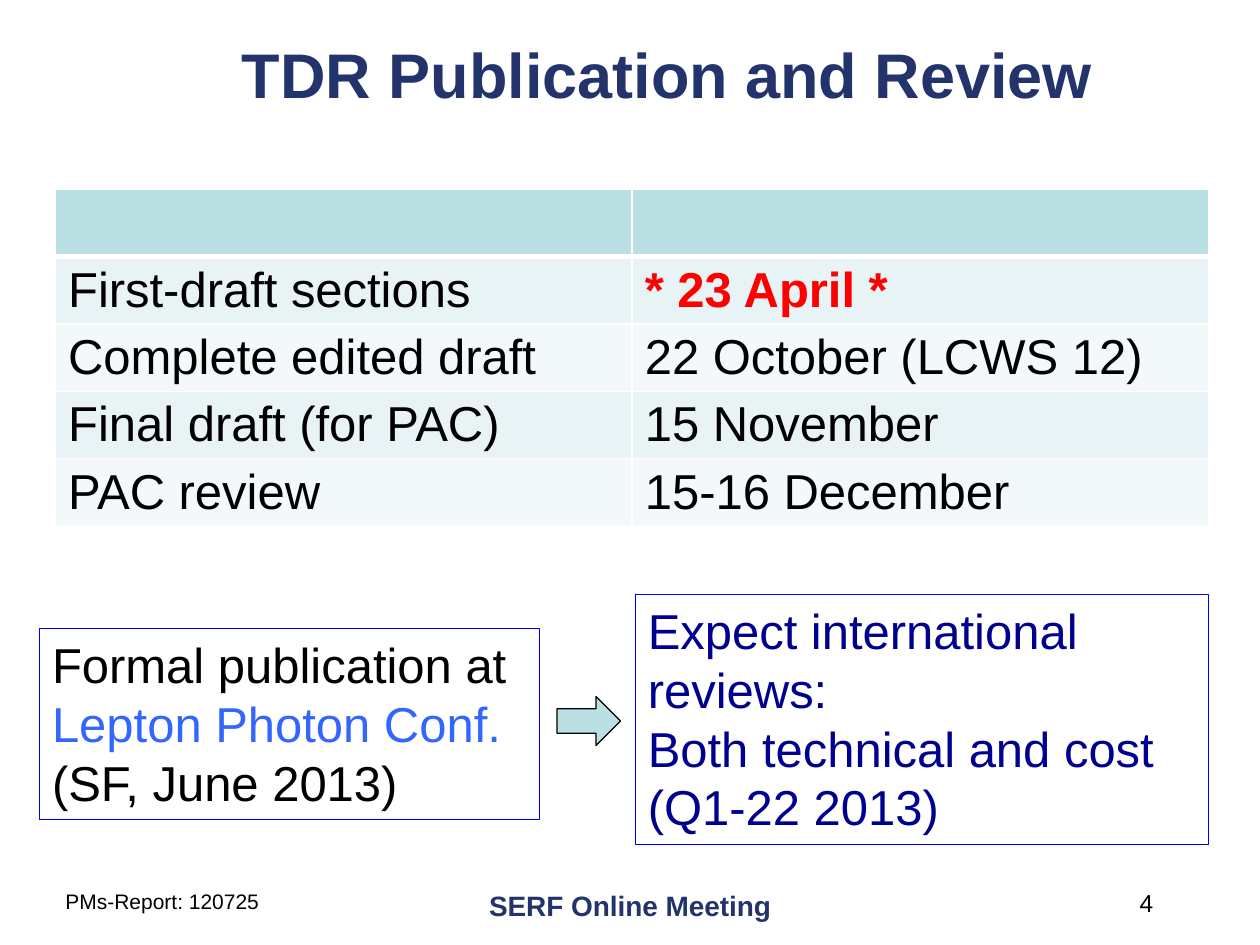
from lxml.etree import SubElement
from pptx import Presentation
from pptx.dml.color import RGBColor
from pptx.enum.shapes import MSO_SHAPE
from pptx.enum.text import MSO_ANCHOR, PP_ALIGN
from pptx.oxml.ns import qn
from pptx.util import Cm, Pt

NAVY = RGBColor(0x23, 0x34, 0x6C)
BLACK = RGBColor(0, 0, 0)
WHITE = RGBColor(0xFF, 0xFF, 0xFF)
RED = RGBColor(0xFF, 0, 0)
BLUE = RGBColor(0, 0, 0xFF)
LINK_BLUE = RGBColor(0x33, 0x66, 0xFF)
DARK_BLUE = RGBColor(0, 0, 0x90)
TEAL = RGBColor(0xBB, 0xE0, 0xE3)
BANDS = [RGBColor(0xE7, 0xF3, 0xF4), RGBColor(0xF3, 0xF9, 0xFA)]


def add_run(paragraph, text, size, color, bold=False):
    run = paragraph.add_run()
    run.text = text
    run.font.name = "Arial"
    run.font.size = Pt(size)
    run.font.bold = bold
    run.font.color.rgb = color


def add_outlined(kind, left, top, width, height, line_color):
    """Add an unfilled shape with a thin outline and no shadow."""
    shape = slide.shapes.add_shape(kind, Cm(left), Cm(top), Cm(width), Cm(height))
    shape.shadow.inherit = False
    shape.fill.background()
    shape.line.color.rgb = line_color
    shape.line.width = Pt(0.75)
    shape.text_frame.word_wrap = True
    shape.text_frame.vertical_anchor = MSO_ANCHOR.TOP
    shape.text_frame.paragraphs[0].alignment = PP_ALIGN.LEFT
    return shape


prs = Presentation()
prs.slide_width, prs.slide_height = Cm(25.4), Cm(19.05)
slide = prs.slides.add_slide(prs.slide_layouts[5])

title = slide.shapes.title
title.left, title.top, title.width, title.height = Cm(3.6), Cm(0.2), Cm(19.7), Cm(2.54)
title.text_frame.vertical_anchor = MSO_ANCHOR.MIDDLE
title.text_frame.paragraphs[0].alignment = PP_ALIGN.CENTER
add_run(title.text_frame.paragraphs[0], "TDR Publication and Review", 36, NAVY, True)

# Schedule, below an empty header row with a thick lower border
milestones = [
    ("First-draft sections", "* 23 April *"),
    ("Complete edited draft", "22 October (LCWS 12)"),
    ("Final draft (for PAC)", "15 November"),
    ("PAC review", "15-16 December"),
]
schedule = slide.shapes.add_table(
    len(milestones) + 1, 2, Cm(1.12), Cm(3.82), Cm(23.25), Cm(6.77)).table
for cell in schedule.rows[0].cells:
    cell.text_frame.paragraphs[0].font.size = Pt(28)
    cell.text_frame.paragraphs[0].font.name = "Arial"
    properties = cell._tc.get_or_add_tcPr()
    border = SubElement(properties, qn("a:lnB"), w=str(Pt(3)))
    border_fill = SubElement(border, qn("a:solidFill"))
    SubElement(border_fill, qn("a:srgbClr"), val=str(WHITE))
    cell.fill.solid()
    cell.fill.fore_color.rgb = TEAL
for row, milestone in enumerate(milestones, start=1):
    for column, text in enumerate(milestone):
        cell = schedule.cell(row, column)
        cell.fill.solid()
        cell.fill.fore_color.rgb = BANDS[(row - 1) % 2]
        urgent = text.startswith("*")
        add_run(cell.text_frame.paragraphs[0], text, 28, RED if urgent else BLACK, urgent)

# Publication leads to reviews
publication = add_outlined(MSO_SHAPE.RECTANGLE, 0.8, 12.67, 10.08, 3.85, BLUE)
paragraph = publication.text_frame.paragraphs[0]
add_run(paragraph, "Formal publication at ", 28, BLACK)
add_run(paragraph, "Lepton Photon Conf.", 28, LINK_BLUE)
paragraph.add_line_break()
add_run(paragraph, "(SF, June 2013)", 28, BLACK)

reviews = add_outlined(MSO_SHAPE.RECTANGLE, 12.81, 11.98, 11.56, 5.05, BLUE)
review_lines = ["Expect international reviews:", "Both technical and cost", "(Q1-22 2013)"]
for index, text in enumerate(review_lines):
    frame = reviews.text_frame
    paragraph = frame.add_paragraph() if index else frame.paragraphs[0]
    paragraph.alignment = PP_ALIGN.LEFT
    add_run(paragraph, text, 28, DARK_BLUE)

arrow = add_outlined(MSO_SHAPE.RIGHT_ARROW, 11.23, 14.04, 1.28, 0.99, BLACK)
arrow.fill.solid()
arrow.fill.fore_color.rgb = TEAL

footers = [
    (1.07, 6.78, "PMs-Report: 120725", 12, BLACK, False, PP_ALIGN.LEFT),
    (8.68, 8.05, "SERF Online Meeting", 16, NAVY, True, PP_ALIGN.CENTER),
    (18.2, 5.3, "4", 14, BLACK, False, PP_ALIGN.RIGHT),
]
for left, width, text, size, color, bold, alignment in footers:
    footer = slide.shapes.add_textbox(Cm(left), Cm(17.78), Cm(width), Cm(1.27))
    footer.text_frame.word_wrap = True
    paragraph = footer.text_frame.paragraphs[0]
    paragraph.alignment = alignment
    add_run(paragraph, text, size, color, bold)

prs.save("out.pptx")
